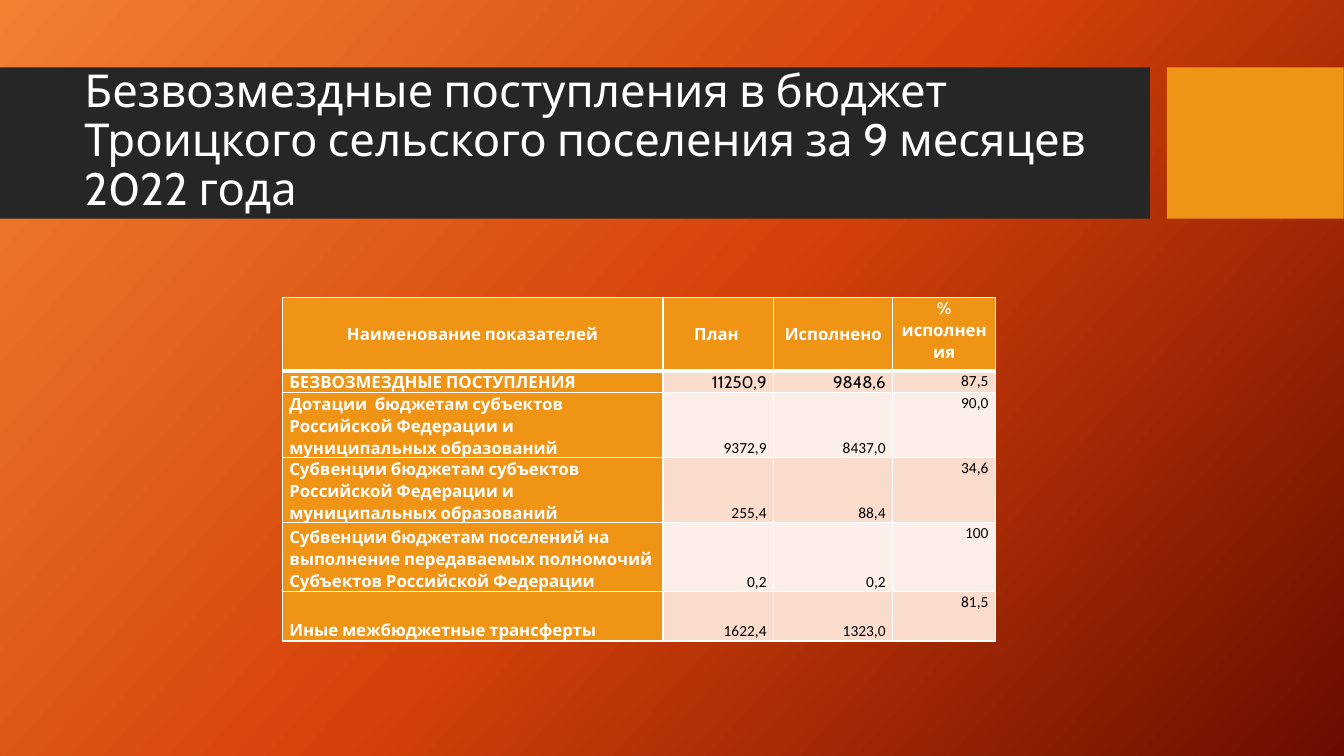
from copy import deepcopy
from dataclasses import dataclass

from lxml.etree import SubElement
from pptx import Presentation
from pptx.dml.color import RGBColor
from pptx.enum.shapes import MSO_SHAPE
from pptx.enum.text import MSO_ANCHOR, PP_ALIGN
from pptx.oxml.ns import qn
from pptx.slide import Slide
from pptx.table import _Cell
from pptx.util import Cm, Pt

WHITE, BLACK, ORANGE, CHARCOAL = "FFFFFF", "000000", "F09415", "262626"
ROW_TINTS = ("F9DCCC", "FCEEE8")
BACKGROUND_STOPS = ((0, "F18031"), (0.5, "D54209"), (1, "6A0D00"))
TITLE = "Безвозмездные поступления в бюджет Троицкого сельского поселения за 9 месяцев 2022 года"


@dataclass(frozen=True)
class Band:
    left: float
    width: float
    color: str


@dataclass(frozen=True)
class CellStyle:
    fill: str
    color: str
    align: PP_ALIGN
    anchor: MSO_ANCHOR
    font: str = "Cabin"
    size: float = 12
    bold: bool = True
    top_line: float = 1
    bottom_line: float = 1


BANDS = (Band(0, 28.98, CHARCOAL), Band(29.41, 4.45, ORANGE))
COLUMN_WIDTHS = (9.6, 2.79, 3, 2.59)
ROW_HEIGHTS = (1.85, 0.56, 1.32, 1.47, 1.75, 1.24)
ROWS = (
    ("Наименование показателей", "План ", "Исполнено", "%\nисполнения"),
    ("БЕЗВОЗМЕЗДНЫЕ ПОСТУПЛЕНИЯ", "11250,9", "9848,6", "87,5"),
    ("Дотации  бюджетам субъектов Российской Федерации и муниципальных образований",
     "9372,9", "8437,0", "90,0"),
    ("Субвенции бюджетам субъектов Российской Федерации и муниципальных образований",
     "255,4", "88,4", "34,6"),
    ("Субвенции бюджетам поселений на выполнение передаваемых полномочий "
     "Субъектов Российской Федерации", "0,2", "0,2", "100"),
    ("Иные межбюджетные трансферты", "1622,4", "1323,0", "81,5"),
)


def rgb(color: str) -> RGBColor:
    return RGBColor.from_string(color)


def paint_background(slide: Slide) -> None:
    fill = slide.background.fill
    fill.gradient()
    fill.gradient_angle = 360 - 42
    stop_list = next(slide.element.iter(qn("a:gsLst")))
    stop_list.append(deepcopy(stop_list[0]))
    for stop, (position, color) in zip(fill.gradient_stops, BACKGROUND_STOPS):
        stop.position = position
        stop.color.rgb = rgb(color)


def add_band(slide: Slide, band: Band) -> None:
    shape = slide.shapes.add_shape(
        MSO_SHAPE.RECTANGLE, Cm(band.left), Cm(1.7), Cm(band.width), Cm(3.81))
    shape.shadow.inherit = False
    shape.fill.solid()
    shape.fill.fore_color.rgb = rgb(band.color)
    shape.line.fill.background()


def add_title(slide: Slide) -> None:
    frame = slide.shapes.add_textbox(Cm(1.88), Cm(2.08), Cm(26.7), Cm(3)).text_frame
    frame.word_wrap = True
    frame.vertical_anchor = MSO_ANCHOR.MIDDLE
    paragraph = frame.paragraphs[0]
    paragraph.text = TITLE
    paragraph.line_spacing = 0.9
    paragraph.font.name = "Cabin"
    paragraph.font.size = Pt(32.4)
    paragraph.font.color.rgb = rgb(WHITE)


def cell_style(row: int, column: int) -> CellStyle:
    last_column = column == len(COLUMN_WIDTHS) - 1
    top_line = 3 if row == 1 else 1
    if row == 0:
        anchor = MSO_ANCHOR.TOP if last_column else MSO_ANCHOR.MIDDLE
        return CellStyle(ORANGE, WHITE, PP_ALIGN.CENTER, anchor, bottom_line=3)
    if column == 0:
        return CellStyle(ORANGE, WHITE, PP_ALIGN.LEFT, MSO_ANCHOR.BOTTOM, top_line=top_line)
    anchor = MSO_ANCHOR.TOP if last_column else MSO_ANCHOR.BOTTOM
    # The totals keep the heading font, the other figures are smaller
    font, size = ("Cabin", 12) if row == 1 and not last_column else ("Calibri", 11)
    return CellStyle(ROW_TINTS[(row - 1) % 2], BLACK, PP_ALIGN.RIGHT, anchor,
                     font, size, False, top_line)


def set_borders(cell: _Cell, style: CellStyle) -> None:
    properties = cell._tc.get_or_add_tcPr()
    widths = {"a:lnL": 1, "a:lnR": 1, "a:lnT": style.top_line, "a:lnB": style.bottom_line}
    for tag, width in widths.items():
        line = SubElement(properties, qn(tag), w=str(Pt(width)))
        SubElement(SubElement(line, qn("a:solidFill")), qn("a:srgbClr"), val=WHITE)


def fill_cell(cell: _Cell, text: str, style: CellStyle) -> None:
    cell.margin_left = cell.margin_right = Cm(0.18)
    cell.margin_top = cell.margin_bottom = 0
    cell.vertical_anchor = style.anchor
    set_borders(cell, style)
    cell.fill.solid()
    cell.fill.fore_color.rgb = rgb(style.fill)
    cell.text_frame.text = text
    for paragraph in cell.text_frame.paragraphs:
        paragraph.alignment = style.align
        paragraph.line_spacing = 1.07
        paragraph.font.name = style.font
        paragraph.font.size = Pt(style.size)
        paragraph.font.bold = style.bold
        paragraph.font.color.rgb = rgb(style.color)


def add_budget_table(slide: Slide) -> None:
    table = slide.shapes.add_table(
        len(ROWS), len(COLUMN_WIDTHS), Cm(7.11), Cm(7.49),
        Cm(sum(COLUMN_WIDTHS)), Cm(sum(ROW_HEIGHTS))).table
    for column, width in zip(table.columns, COLUMN_WIDTHS):
        column.width = Cm(width)
    for row, height in zip(table.rows, ROW_HEIGHTS):
        row.height = Cm(height)
    for row_index, texts in enumerate(ROWS):
        for column_index, text in enumerate(texts):
            fill_cell(table.cell(row_index, column_index), text,
                      cell_style(row_index, column_index))


def main() -> None:
    presentation = Presentation()
    presentation.slide_width, presentation.slide_height = Cm(33.87), Cm(19.05)
    slide = presentation.slides.add_slide(presentation.slide_layouts[6])

    # Background and title bands
    paint_background(slide)
    for band in BANDS:
        add_band(slide, band)

    # Content
    add_title(slide)
    add_budget_table(slide)
    presentation.save("out.pptx")


if __name__ == "__main__":
    main()
